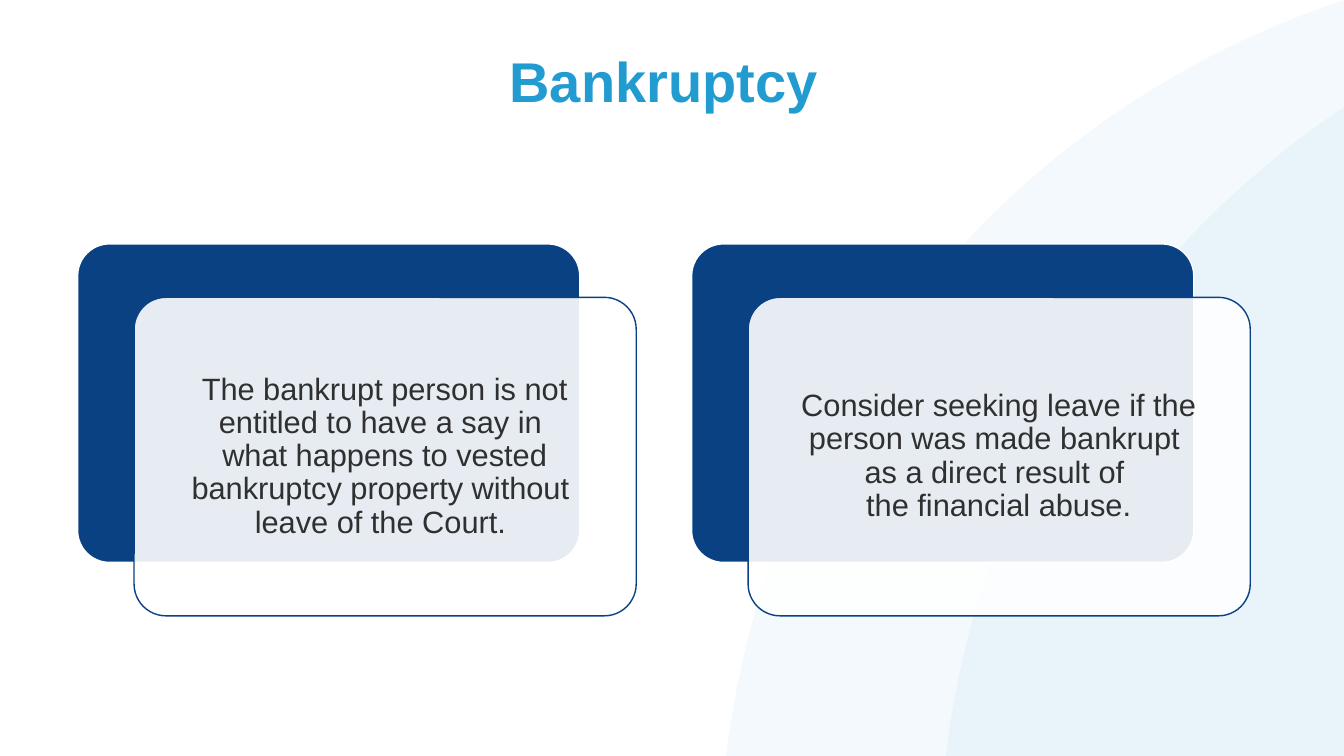
import pptx
import pptx.util
import pptx.dml.color
import pptx.enum.shapes
import pptx.enum.text
import pptx.oxml
import pptx.oxml.ns

Inches = pptx.util.Inches
Pt = pptx.util.Pt
RGBColor = pptx.dml.color.RGBColor
ShapeType = pptx.enum.shapes.MSO_SHAPE
Anchor = pptx.enum.text.MSO_ANCHOR

THEME = {
    "font": "Arial",
    "accent": "229CD0",
    "navy": "094183",
    "white": "FFFFFF",
    "text": "303030",
    "title_size": 40,
    "body_size": 22,
}

presentation = pptx.Presentation()
presentation.slide_width = Inches(13.33)
presentation.slide_height = Inches(7.5)
slide = presentation.slides.add_slide(presentation.slide_layouts[6])


def add_panel(kind, box, fill, opacity=100, line=None):
    """Add a filled shape with an optional outline and opacity in percent."""
    shape = slide.shapes.add_shape(kind, *map(Inches, box))
    shape.shadow.inherit = False
    shape.fill.solid()
    shape.fill.fore_color.rgb = RGBColor.from_string(fill)
    if opacity < 100:
        color = shape.fill._xPr.find(".//" + pptx.oxml.ns.qn("a:srgbClr"))
        alpha = pptx.oxml.parse_xml(
            f'<a:alpha {pptx.oxml.ns.nsdecls("a")} val="{opacity * 1000}"/>')
        color.append(alpha)
    if line:
        shape.line.color.rgb = RGBColor.from_string(line)
        shape.line.width = Pt(1)
    else:
        shape.line.fill.background()
    if kind == ShapeType.ROUNDED_RECTANGLE:
        shape.adjustments[0] = 0.1


def add_text(box, lines, frame_format, font_format, color):
    """Add one centred paragraph, with a line break between the lines."""
    text_frame = slide.shapes.add_textbox(*map(Inches, box)).text_frame
    for name, value in frame_format.items():
        setattr(text_frame, name, value)
    paragraph = text_frame.paragraphs[0]
    paragraph.alignment = pptx.enum.text.PP_ALIGN.CENTER
    paragraph.line_spacing = 0.9
    for index, line in enumerate(lines):
        if index:
            paragraph.add_line_break()
        run = paragraph.add_run()
        run.text = line
        for name, value in font_format.items():
            setattr(run.font, name, value)
        run.font.color.rgb = RGBColor.from_string(color)


# Background circles
for circle_left in (7.14, 9.32):
    add_panel(ShapeType.OVAL, (circle_left, -0.45, 18.02, 18.02),
              THEME["accent"], opacity=5)

# Title
add_text(
    (0.77, 0.49, 11.62, 0.97),
    ["Bankruptcy"],
    {"word_wrap": True, "vertical_anchor": Anchor.TOP},
    {"name": THEME["font"], "size": Pt(THEME["title_size"]), "bold": True},
    THEME["accent"],
)

# Cards: navy panel behind, translucent white panel in front, text on top
CARD_LEFT, CARD_STEP = 0.77, 6.09
CARD_WIDTH, CARD_HEIGHT = 4.98, 3.16
CARDS = [
    ["The bankrupt person is not entitled to have a say in ",
     "what happens to vested bankruptcy property without ",
     "leave of the Court. "],
    ["Consider seeking leave if the person was made bankrupt ",
     "as a direct result of ",
     "the financial abuse."],
]
body_frame = {"word_wrap": True, "vertical_anchor": Anchor.MIDDLE}
for side in ("left", "right", "top", "bottom"):
    body_frame[f"margin_{side}"] = Inches(0.09)
body_font = {"name": THEME["font"], "size": Pt(THEME["body_size"])}

for index, lines in enumerate(CARDS):
    left = CARD_LEFT + index * CARD_STEP
    add_panel(ShapeType.ROUNDED_RECTANGLE,
              (left, 2.42, CARD_WIDTH, CARD_HEIGHT),
              THEME["navy"], line=THEME["white"])
    add_panel(ShapeType.ROUNDED_RECTANGLE,
              (left + 0.56, 2.95, CARD_WIDTH, CARD_HEIGHT),
              THEME["white"], opacity=90, line=THEME["navy"])
    add_text((left + 0.65, 3.04, 4.79, 2.98), lines,
             body_frame, body_font, THEME["text"])

presentation.save("out.pptx")
